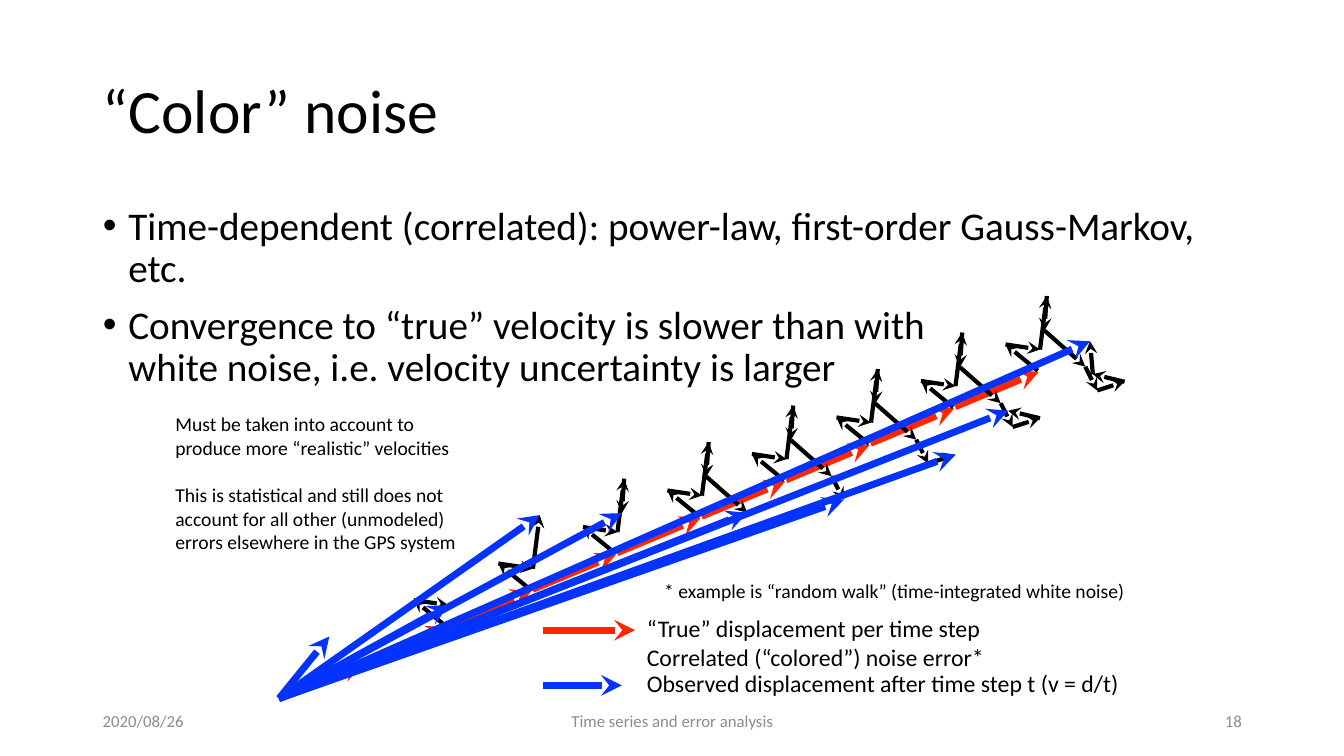
"""Build the slide on colour noise with its random-walk diagram."""
from dataclasses import dataclass
from itertools import pairwise

from lxml.etree import SubElement
from pptx import Presentation
from pptx.dml.color import RGBColor
from pptx.enum.shapes import MSO_CONNECTOR
from pptx.enum.text import MSO_ANCHOR, MSO_AUTO_SIZE, PP_ALIGN
from pptx.oxml.ns import qn
from pptx.util import Cm, Pt


@dataclass(frozen=True)
class Theme:
    face: str = "Calibri"
    black: RGBColor = RGBColor(0, 0, 0)
    gray: RGBColor = RGBColor(0x8C, 0x8C, 0x8C)
    red: RGBColor = RGBColor(0xFF, 0x26, 0x00)
    blue: RGBColor = RGBColor(0x04, 0x33, 0xFF)
    title: Pt = Pt(44)
    body: Pt = Pt(28)
    label: Pt = Pt(17)
    note: Pt = Pt(14)
    foot: Pt = Pt(12)
    thick: Pt = Pt(5)
    thin: Pt = Pt(3)


theme = Theme()
deck = Presentation()
deck.slide_width, deck.slide_height = Cm(33.87), Cm(19.05)
slide = deck.slides.add_slide(deck.slide_layouts[1])
shapes = slide.shapes


def write(shape, box, lines, size, color, frame, para):
    """Place a shape and fill it with formatted paragraphs."""
    for side, value in zip(("left", "top", "width", "height"), box):
        setattr(shape, side, Cm(value))
    text = shape.text_frame
    for name, value in {"auto_size": MSO_AUTO_SIZE.NONE, **frame}.items():
        setattr(text, name, value)
    for index, line in enumerate(lines):
        item = text.add_paragraph() if index else text.paragraphs[0]
        item.text = line
        for name, value in para.items():
            setattr(item, name, value)
        for run in item.runs:
            run.font.name, run.font.size = theme.face, size
            run.font.color.rgb = color


def arrow(start, tip, color, width):
    """Draw a stealth arrow between two points given in centimetres."""
    ends = [Cm(value) for value in (*start, *tip)]
    line = shapes.add_connector(MSO_CONNECTOR.STRAIGHT, *ends)
    line.line.color.rgb, line.line.width = color, width
    props = line.element.spPr
    SubElement(props.find(qn("a:ln")), qn("a:tailEnd"), type="stealth")
    SubElement(props, qn("a:effectLst"))


title, body = slide.placeholders
middle = {"vertical_anchor": MSO_ANCHOR.MIDDLE, "word_wrap": True}
write(title, (2.34, 1.02, 29.21, 3.68), ["“Color” noise"], theme.title,
      theme.black, middle,
      {"alignment": PP_ALIGN.LEFT, "line_spacing": 0.9})
points = [
    "Time-dependent (correlated): power-law, first-order Gauss-Markov, etc.",
    "Convergence to “true” velocity is slower than with\n"
    "white noise, i.e. velocity uncertainty is larger",
]
write(body, (2.34, 5.08, 29.21, 12.09), points, theme.body, theme.black,
      {"word_wrap": True}, {"line_spacing": 0.9, "space_before": Pt(10)})
for item in body.text_frame.paragraphs:
    props = item._p.get_or_add_pPr()
    props.set("marL", str(Cm(0.64)))
    props.set("indent", str(-Cm(0.64)))

footer = [
    (2.34, 7.62, "2020/08/26", PP_ALIGN.LEFT),
    (11.23, 11.43, "Time series and error analysis", PP_ALIGN.CENTER),
    (23.93, 7.62, "18", PP_ALIGN.RIGHT),
]
for left, width, line, align in footer:
    write(shapes.add_textbox(0, 0, 0, 0), (left, 17.65, width, 1.02), [line],
          theme.foot, theme.gray, middle, {"alignment": align})

steps = range(1, 10)
tips = [(7.01 + 2.13 * step, 17.65 - 0.92 * step) for step in steps]
walk = [(0, 0), (-0.81, -0.66), (0.06, -0.53), (0.23, -1.88), (0.17, -1.01),
        (1.2, -0.1), (1.5, 0.5), (2.19, 0.28), (1.39, 0.09), (1.32, -0.74)]
for x, y in tips:
    arrow((x - 2.11, y + 0.88), (x, y), theme.red, theme.thick)

paths = [[(x - 0.03 + dx, y - 0.03 + dy) for dx, dy in walk[:step + 1]]
         for step, (x, y) in zip(steps, tips)]
for path in paths[1:]:
    for start, tip in pairwise(path):
        arrow(start, tip, theme.black, theme.thin)
for path in paths:
    arrow((7.03, 17.6), path[-1], theme.blue, theme.thick)

arrow((13.68, 15.88), (16, 15.88), theme.red, theme.thick)
arrow((13.68, 17.27), (15.67, 17.27), theme.blue, theme.thick)
sides = ("margin_left", "margin_top", "margin_right", "margin_bottom")
tight = {**middle, "word_wrap": False, **dict.fromkeys(sides, Cm(0.1))}
labels = [
    (16.64, 14.5, 11.96, 0.79, theme.note,
     "* example is “random walk” (time-integrated white noise)"),
    (16.2, 15.37, 8.69, 0.91, theme.label,
     "“True” displacement per time step"),
    (16.2, 16.1, 8.84, 0.91, theme.label,
     "Correlated (“colored”) noise error*"),
    (16.2, 16.76, 12.22, 0.91, theme.label,
     "Observed displacement after time step t (v = d/t)"),
]
for *box, size, line in labels:
    write(shapes.add_textbox(0, 0, 0, 0), box, [line], size, theme.black,
          tight, {"alignment": PP_ALIGN.LEFT})

notes = [
    "Must be taken into account to produce more “realistic” velocities",
    "This is statistical and still does not account for all other "
    "(unmodeled) errors elsewhere in the GPS system",
]
write(shapes.add_textbox(0, 0, 0, 0), (4.42, 10.39, 7.34, 3.68), notes,
      theme.note, theme.black,
      {"word_wrap": True, **dict.fromkeys(sides, 0)},
      {"space_before": Pt(17)})

deck.save("out.pptx")
